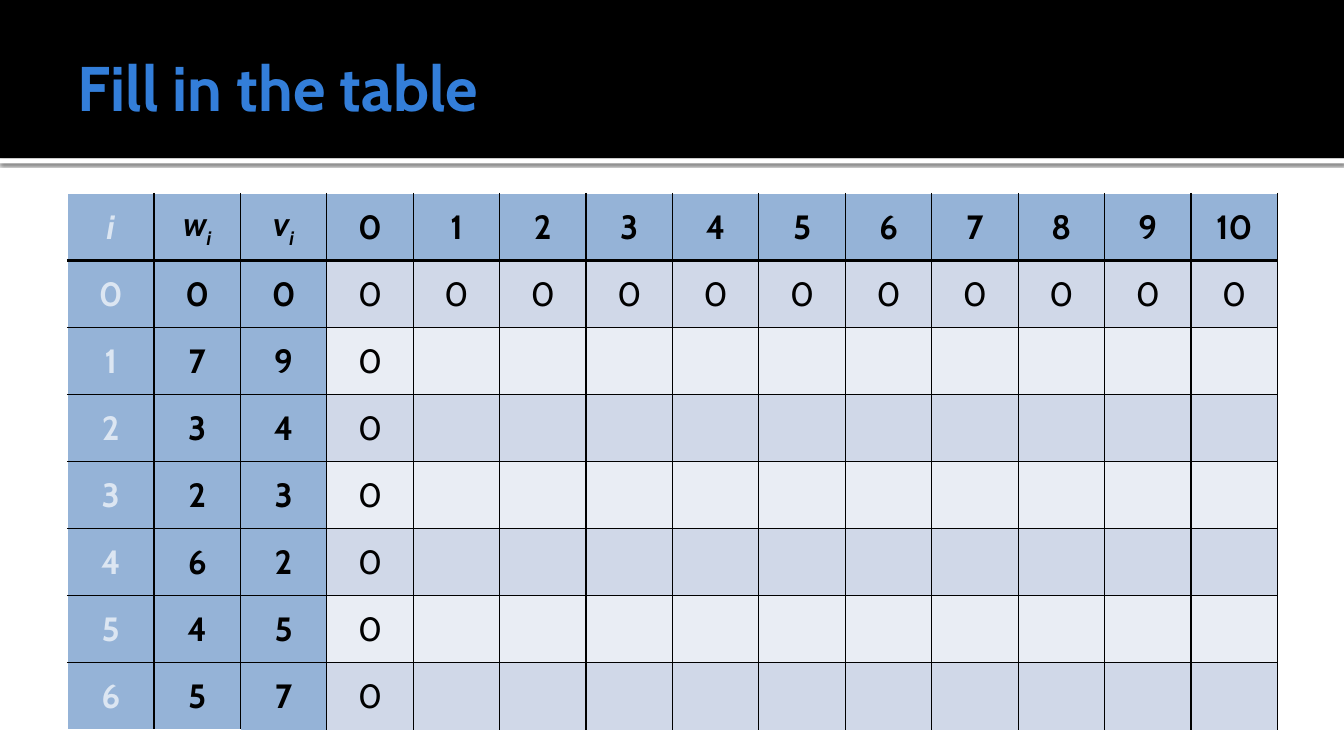
from lxml import etree
from pptx import Presentation
from pptx.dml.color import RGBColor
from pptx.enum.shapes import MSO_SHAPE
from pptx.enum.text import MSO_ANCHOR, MSO_AUTO_SIZE, PP_ALIGN
from pptx.oxml import parse_xml
from pptx.oxml.ns import nsdecls, qn
from pptx.util import Inches, Pt

RECTANGLE = MSO_SHAPE.RECTANGLE
MIDDLE = MSO_ANCHOR.MIDDLE
NO_AUTOFIT = MSO_AUTO_SIZE.NONE
LEFT, CENTER = PP_ALIGN.LEFT, PP_ALIGN.CENTER

FONT = "Cabin"
COLORS = {
    "black": "000000",
    "white": "FFFFFF",
    "title": "337ED9",
    "heading": "95B3D7",
    "index": "DCE6F2",
    "dark_band": "D0D8E8",
    "light_band": "E9EDF4",
}

# Knapsack data: weight and value of items 0 to 6, capacities 0 to 10
ITEMS = [(0, 0), (7, 9), (3, 4), (2, 3), (6, 2), (4, 5), (5, 7)]
CAPACITIES = range(11)
LABEL_COLUMNS = 3


def rgb(name):
    return RGBColor.from_string(COLORS[name])


def style_font(font, size, color, bold, italic=False):
    font.name = FONT
    font.size = Pt(size)
    font.bold = bold
    font.italic = italic
    font.color.rgb = rgb(color)


def add_band(slide, top, height, color):
    band = slide.shapes.add_shape(RECTANGLE, 0, Inches(top), Inches(13.33), Inches(height))
    band.shadow.inherit = False
    band.fill.solid()
    band.fill.fore_color.rgb = rgb(color)
    band.line.fill.background()
    return band


def add_shadow(band):
    effects = band.element.spPr.find(qn("a:effectLst"))
    effects.append(parse_xml(
        f'<a:outerShdw {nsdecls("a")} blurRad="{Pt(2.5)}" dist="{Pt(0.8)}" dir="5400000">'
        f'<a:srgbClr val="{COLORS["black"]}"><a:alpha val="60000"/></a:srgbClr>'
        "</a:outerShdw>"))


def set_title(slide, text):
    title = slide.shapes.title
    title.left, title.top = Inches(0.67), Inches(0.17)
    title.width, title.height = Inches(12), Inches(1.37)
    frame = title.text_frame
    frame.text = text
    frame.word_wrap = True
    frame.auto_size = NO_AUTOFIT
    frame.vertical_anchor = MIDDLE
    frame.margin_left = Inches(0.1)
    frame.margin_right = frame.margin_top = frame.margin_bottom = Inches(0.05)
    heading = frame.paragraphs[0]
    heading.alignment = LEFT
    style_font(heading.font, 45, "title", bold=True)
    title.element.getparent().append(title.element)  # in front of the bands


def set_borders(cell, row, column, last_row):
    if row < last_row:
        bottom = ("black", 3 if row == 0 else 1)
    else:
        bottom = ("white", 1) if column < 2 else None
    borders = {
        "lnL": ("white" if column == 0 else "black", 1),
        "lnR": ("black", 1),
        "lnT": ("white" if row == 0 else "black", 3 if row == 1 else 1),
        "lnB": bottom,
    }
    properties = cell._tc.get_or_add_tcPr()
    for side, border in borders.items():
        line = etree.SubElement(properties, qn(f"a:{side}"))
        if border is None:
            etree.SubElement(line, qn("a:noFill"))
            continue
        color, width = border
        line.set("w", str(Pt(width)))
        fill = etree.SubElement(line, qn("a:solidFill"))
        etree.SubElement(fill, qn("a:srgbClr")).set("val", COLORS[color])


def write_cell(cell, text, color, bold, italic):
    """Write centred text; a part after "_" becomes a subscript."""
    cell.vertical_anchor = MIDDLE
    cell.margin_left = cell.margin_right = Inches(0.13)
    cell.margin_top = cell.margin_bottom = Inches(0.06)
    paragraph = cell.text_frame.paragraphs[0]
    paragraph.alignment = CENTER
    base, _, subscript = text.partition("_")
    paragraph.add_run().text = base
    if subscript:
        index = paragraph.add_run()
        index.text = subscript
        index._r.get_or_add_rPr().set("baseline", "-25000")
    style_font(paragraph.font, 24, color, bold, italic)


def table_rows():
    rows = [["i", "w_i", "v_i", *map(str, CAPACITIES)]]
    for item, (weight, value) in enumerate(ITEMS):
        # Base cases: no items, or no capacity
        known = ["0" if item == 0 or capacity == 0 else "" for capacity in CAPACITIES]
        rows.append([str(item), str(weight), str(value), *known])
    return rows


def add_knapsack_table(slide):
    rows = table_rows()
    frame = slide.shapes.add_table(len(rows), len(rows[0]), Inches(0.67), Inches(1.92),
                                   Inches(12), Inches(5.32))
    table = frame.table
    table.first_row = table.horz_banding = False
    for r, texts in enumerate(rows):
        for c, text in enumerate(texts):
            cell = table.cell(r, c)
            label = r == 0 or c < LABEL_COLUMNS
            set_borders(cell, r, c, len(rows) - 1)
            band = "dark_band" if r % 2 else "light_band"
            cell.fill.solid()
            cell.fill.fore_color.rgb = rgb("heading" if label else band)
            if text:
                write_cell(cell, text, "index" if c == 0 else "black", bold=label,
                           italic=r == 0 and c < LABEL_COLUMNS)


def main():
    prs = Presentation()
    prs.slide_width, prs.slide_height = Inches(13.33), Inches(7.5)
    slide = prs.slides.add_slide(prs.slide_layouts[5])

    # Title band with a shadowed white strip below it
    add_shadow(add_band(slide, 1.57, 0.05, "white"))
    add_band(slide, 0, 1.57, "black")
    set_title(slide, "Fill in the table")

    # Table of subproblems
    add_knapsack_table(slide)

    prs.save("out.pptx")


if __name__ == "__main__":
    main()
